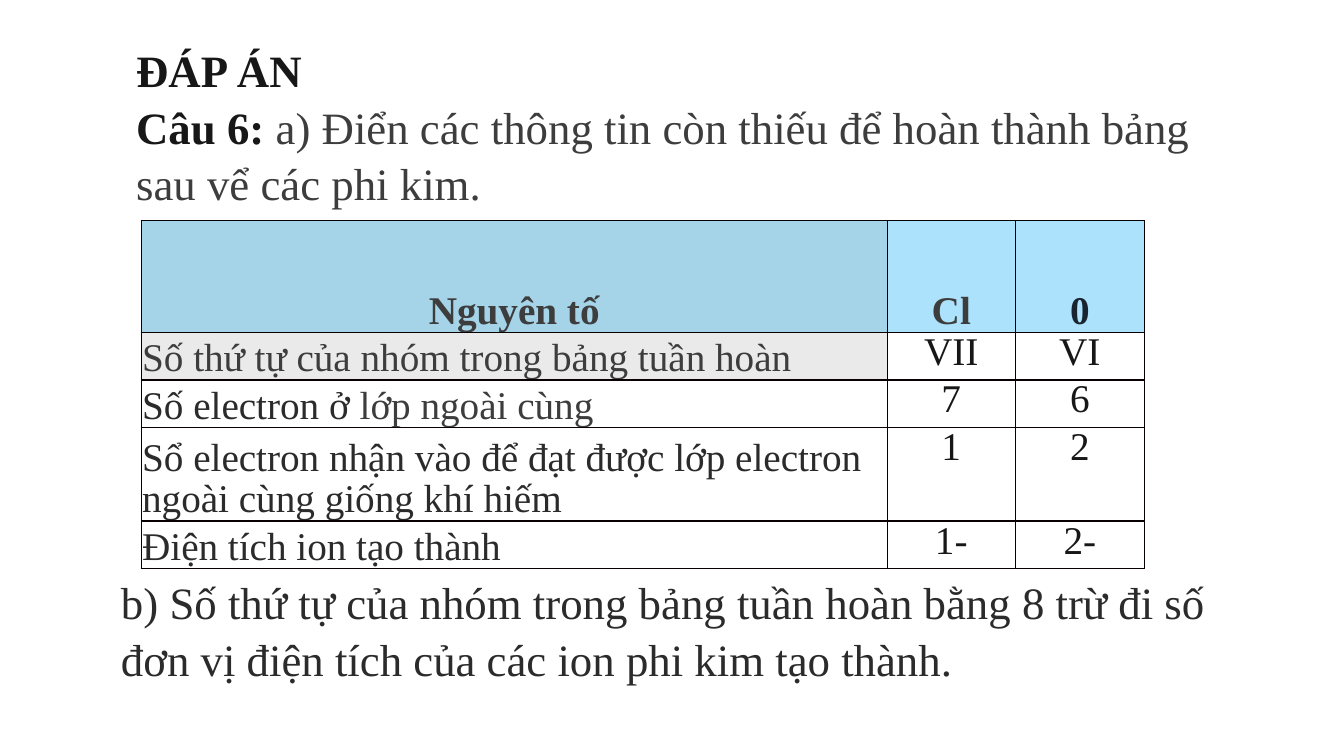
"""Build the answer slide for question 6 on non-metals."""
from dataclasses import dataclass

from lxml.etree import SubElement
from pptx import Presentation
from pptx.dml.color import RGBColor as Color
from pptx.enum.text import MSO_ANCHOR as Anchor, MSO_AUTO_SIZE as AutoSize, PP_ALIGN as Align
from pptx.oxml.ns import qn
from pptx.util import Inches, Pt


@dataclass(frozen=True)
class Theme:
    font: str = "Times New Roman"
    text_size: int = 32
    table_size: int = 28
    text_spacing: float = 1.05
    table_spacing: float = 0.95
    black: str = "181717"
    dark: str = "2B2B2C"
    gray: str = "3D3D3E"
    navy: str = "192430"
    header: str = "A5D3E7"
    element: str = "ACE2FB"
    shade: str = "EAEAEA"
    white: str = "FFFFFF"
    border: str = "080000"


THEME = Theme()

QUESTION = [
    [("ĐÁP ÁN", THEME.black, True)],
    [("Câu 6: ", THEME.black, True),
     ("a) Điển các thông tin còn thiếu để hoàn thành bảng sau vể các phi kim.", THEME.gray, False)],
]
CONCLUSION = [
    [("b) Số thứ tự của nhóm trong bảng tuần hoàn bằng 8 trừ đi số đơn vị điện tích "
      "của các ion phi kim tạo thành.", THEME.dark, False)],
]
HEADINGS = [("Nguyên tố", THEME.gray, THEME.header),
            ("Cl", THEME.gray, THEME.element),
            ("0", THEME.navy, THEME.element)]
PROPERTIES = [
    ([("Số thứ tự của nhóm trong bảng tuần hoàn", THEME.gray, False)], THEME.shade, "VII", "VI"),
    ([("Số electron ở ", THEME.dark, False), ("lớp ngoài cùng", THEME.gray, False)],
     THEME.white, "7", "6"),
    ([("Sổ electron nhận vào để đạt được lớp electron ngoài cùng giống khí hiếm",
       THEME.dark, False)], THEME.white, "1", "2"),
    ([("Điện tích ion tạo thành", THEME.dark, False)], THEME.white, "1-", "2-"),
]

QUESTION_BOX = (1.25, 0.35, 10.95, 1.72)
CONCLUSION_BOX = (1.1, 5.63, 11.1, 1.18)
TABLE_LEFT, TABLE_TOP = 1.4, 2.19
COLUMN_WIDTHS = [7.4, 1.27, 1.28]
ROW_HEIGHTS = [1.11, 0.47, 0.47, 0.93, 0.47]


def write_paragraph(paragraph, runs, size, spacing, align=Align.LEFT):
    paragraph.alignment = align
    paragraph.line_spacing = spacing
    paragraph.space_before = paragraph.space_after = Pt(0)
    paragraph.font.name = THEME.font
    paragraph.font.size = Pt(size)
    for words, color, bold in runs:
        run = paragraph.add_run()
        run.text = words
        run.font.bold = bold
        run.font.color.rgb = Color.from_string(color)


def fill_placeholder(placeholder, box, paragraphs):
    placeholder.left, placeholder.top, placeholder.width, placeholder.height = map(Inches, box)
    frame = placeholder.text_frame
    frame.word_wrap = True
    frame.auto_size = AutoSize.NONE
    frame.vertical_anchor = Anchor.TOP
    for index, runs in enumerate(paragraphs):
        paragraph = frame.add_paragraph() if index else frame.paragraphs[0]
        write_paragraph(paragraph, runs, THEME.text_size, THEME.text_spacing)
        properties = paragraph._p.get_or_add_pPr()
        properties.set("marL", "0")
        properties.set("indent", "0")
        SubElement(properties, qn("a:buNone"))
        defaults = properties.find(qn("a:defRPr"))
        if defaults is not None:
            properties.append(defaults)


def fill_cell(cell, runs, fill, align, anchor):
    cell.margin_left = cell.margin_right = Inches(0.01)
    cell.margin_top = cell.margin_bottom = 0
    cell.vertical_anchor = anchor
    for side in ("L", "R", "T", "B"):
        line = SubElement(cell._tc.get_or_add_tcPr(), qn(f"a:ln{side}"), w=str(Pt(1)))
        SubElement(SubElement(line, qn("a:solidFill")), qn("a:srgbClr"), val=THEME.border)
    cell.fill.solid()
    cell.fill.fore_color.rgb = Color.from_string(fill)
    write_paragraph(cell.text_frame.paragraphs[0], runs,
                    THEME.table_size, THEME.table_spacing, align)


def add_properties_table(slide):
    table = slide.shapes.add_table(
        len(ROW_HEIGHTS), len(COLUMN_WIDTHS), Inches(TABLE_LEFT), Inches(TABLE_TOP),
        Inches(sum(COLUMN_WIDTHS)), Inches(sum(ROW_HEIGHTS))).table
    for column, width in zip(table.columns, COLUMN_WIDTHS):
        column.width = Inches(width)
    for row, height in zip(table.rows, ROW_HEIGHTS):
        row.height = Inches(height)
    for column, (heading, color, fill) in enumerate(HEADINGS):
        fill_cell(table.cell(0, column), [(heading, color, True)], fill,
                  Align.CENTER, Anchor.BOTTOM)
    for row, (label, fill, *values) in enumerate(PROPERTIES, 1):
        fill_cell(table.cell(row, 0), label, fill, Align.LEFT, Anchor.BOTTOM)
        for column, value in enumerate(values, 1):
            fill_cell(table.cell(row, column), [(value, THEME.black, False)], THEME.white,
                      Align.CENTER, Anchor.TOP)


def main():
    deck = Presentation()
    deck.slide_width, deck.slide_height = Inches(13.33), Inches(7.5)
    slide = deck.slides.add_slide(deck.slide_layouts[1])
    fill_placeholder(slide.shapes.title, QUESTION_BOX, QUESTION)
    fill_placeholder(slide.placeholders[1], CONCLUSION_BOX, CONCLUSION)
    add_properties_table(slide)
    deck.save("out.pptx")


if __name__ == "__main__":
    main()
